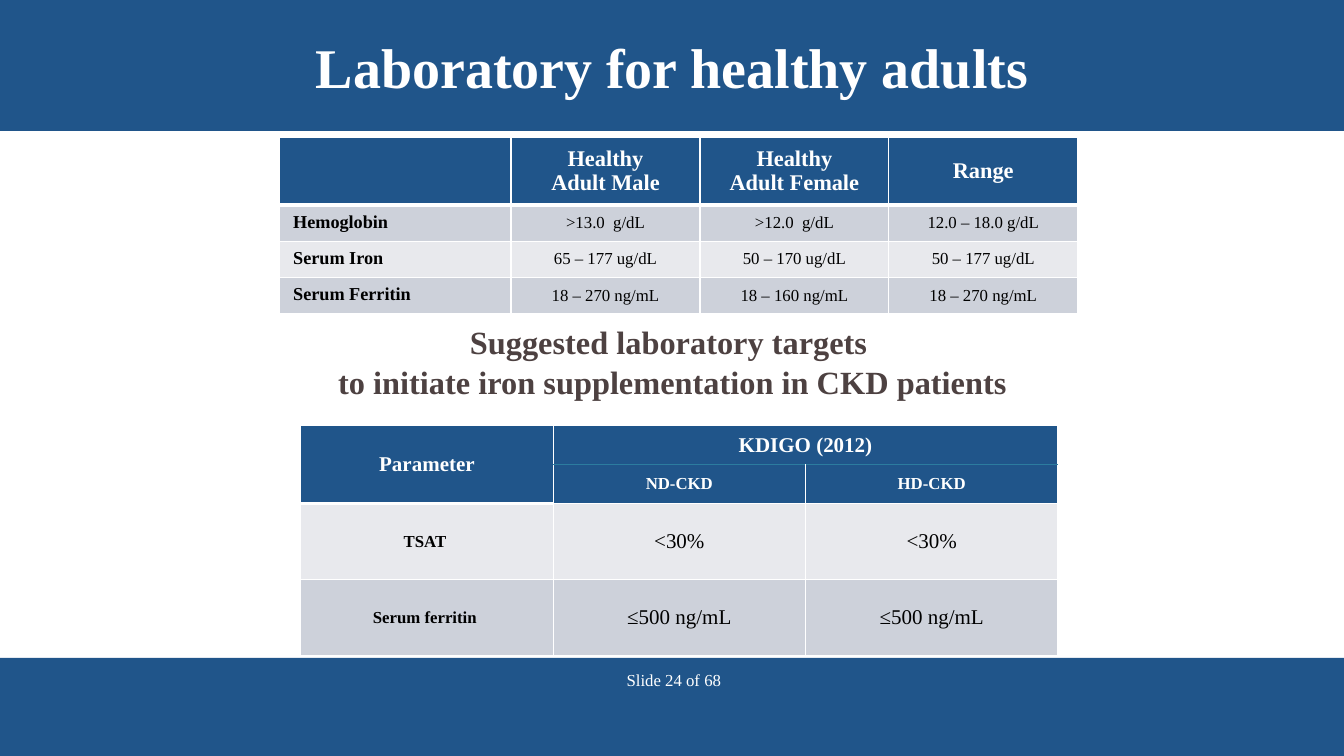
from dataclasses import dataclass

from lxml import etree
from pptx import Presentation
from pptx.dml.color import RGBColor
from pptx.enum import shapes, text
from pptx.oxml import ns
from pptx.util import Cm, Pt


@dataclass(frozen=True)
class Theme:
    """Colours, type sizes and the typeface of the slide."""
    font: str = "Times New Roman"
    blue: str = "20558A"
    white: str = "FFFFFF"
    black: str = "000000"
    brown: str = "4D4141"
    teal: str = "2C7C9F"
    dark_band: str = "CDD1DA"
    light_band: str = "E8E9ED"
    title: float = 40
    subtitle: float = 23.1
    heading: float = 16
    target: float = 15
    label: float = 13
    small: float = 12


THEME = Theme()
SLIDE_WIDTH, SLIDE_HEIGHT = 33.87, 19.05
CENTER, LEFT = text.PP_ALIGN.CENTER, text.PP_ALIGN.LEFT
TOP, MIDDLE, BOTTOM = (text.MSO_ANCHOR.TOP, text.MSO_ANCHOR.MIDDLE,
                       text.MSO_ANCHOR.BOTTOM)

HEALTHY = [
    ["", "Healthy\nAdult Male", "Healthy\nAdult Female", "Range"],
    ["Hemoglobin", ">13.0  g/dL", ">12.0  g/dL", "12.0 – 18.0 g/dL"],
    ["Serum Iron", "65 – 177 ug/dL", "50 – 170 ug/dL", "50 – 177 ug/dL"],
    ["Serum Ferritin", "18 – 270 ng/mL", "18 – 160 ng/mL", "18 – 270 ng/mL"],
]
TARGETS = [
    ["Parameter", "KDIGO (2012)", ""],
    ["", "ND-CKD", "HD-CKD"],
    ["TSAT ", "<30%", "<30%"],
    ["Serum ferritin ", "≤500 ng/mL", "≤500 ng/mL"],
]


def set_values(part, values):
    """Set every attribute of the part named in the values."""
    for name, value in values.items():
        setattr(part, name, value)


def write(frame, wording, size, color, bold=False, align=CENTER, spacing=None):
    """Fill a text frame with evenly formatted paragraphs."""
    frame.text = wording
    for paragraph in frame.paragraphs:
        set_values(paragraph, {"alignment": align, "line_spacing": spacing})
        for run in paragraph.runs:
            set_values(run.font, {"name": THEME.font, "size": Pt(size), "bold": bold})
            run.font.color.rgb = RGBColor.from_string(color)


def add_band(slide, top, height):
    """Draw a blue band across the slide."""
    band = slide.shapes.add_shape(shapes.MSO_SHAPE.RECTANGLE, 0, Cm(top),
                                  Cm(SLIDE_WIDTH), Cm(height))
    band.shadow.inherit = False
    band.fill.solid()
    band.fill.fore_color.rgb = RGBColor.from_string(THEME.blue)
    band.line.fill.background()


def add_text(slide, box, wording, anchor, **style):
    """Place a wrapped text box."""
    frame = slide.shapes.add_textbox(*map(Cm, box)).text_frame
    set_values(frame, {"word_wrap": True, "vertical_anchor": anchor})
    write(frame, wording, **style)


def add_borders(cell, edges):
    """Draw white cell borders, with other colours and widths given by edge."""
    properties = cell._tc.get_or_add_tcPr()
    for index, edge in enumerate("LRTB"):
        color, width = edges.get(edge, (THEME.white, 1))
        line = etree.Element(ns.qn(f"a:ln{edge}"), w=str(Pt(width)))
        fill = etree.SubElement(line, ns.qn("a:solidFill"))
        etree.SubElement(fill, ns.qn("a:srgbClr"), val=color)
        properties.insert(index, line)


def add_table(slide, corner, widths, heights, rows, style_cell):
    """Build a table whose cells are styled by the given rule."""
    box = (*corner, sum(widths), sum(heights))
    table = slide.shapes.add_table(len(rows), len(widths), *map(Cm, box)).table
    set_values(table, {"first_row": False, "horz_banding": False})
    for column, width in zip(table.columns, widths):
        column.width = Cm(width)
    for row, height in zip(table.rows, heights):
        row.height = Cm(height)
    for r, wordings in enumerate(rows):
        for c, wording in enumerate(wordings):
            cell = table.cell(r, c)
            fill, edges, layout, style = style_cell(r, c)
            set_values(cell, layout)
            write(cell.text_frame, wording, **style)
            cell.fill.solid()
            cell.fill.fore_color.rgb = RGBColor.from_string(fill)
            add_borders(cell, edges)
    return table


def cell_layout(side, end, anchor=MIDDLE):
    """Give the insets and anchor of a cell."""
    return {"margin_left": Cm(side), "margin_right": Cm(side),
            "margin_top": Cm(end), "margin_bottom": Cm(end),
            "vertical_anchor": anchor}


def healthy_cell(r, c):
    """Style one cell of the healthy adult values."""
    if r == 0:
        return (THEME.blue, {"B": (THEME.white, 3)}, cell_layout(0.36, 0.18),
                {"size": THEME.heading, "color": THEME.white, "bold": True})
    fill = THEME.dark_band if r % 2 else THEME.light_band
    is_label = c == 0
    return (fill, {"T": (THEME.white, 3)} if r == 1 else {},
            cell_layout(0.36, 0.18, TOP if is_label else MIDDLE),
            {"size": THEME.label if is_label else THEME.small,
             "color": THEME.black, "bold": is_label,
             "align": LEFT if is_label else CENTER})


def target_cell(r, c):
    """Style one cell of the treatment targets."""
    if r < 2:
        edges = {"B": (THEME.white, 3)} if c == 0 else {"BT"[r]: (THEME.teal, 1)}
        return (THEME.blue, edges,
                cell_layout(0.25, 0.13) if r == 0 else cell_layout(0.33, 0.18),
                {"size": THEME.small if r else THEME.target,
                 "color": THEME.white, "bold": True})
    return (THEME.dark_band if r % 2 else THEME.light_band,
            {"T": (THEME.white, 3)} if (r, c) == (2, 0) else {},
            cell_layout(0.33, 0.18),
            {"size": THEME.target if c else THEME.small,
             "color": THEME.black, "bold": c == 0})


def main():
    """Build and save the laboratory slide."""
    deck = Presentation()
    set_values(deck, {"slide_width": Cm(SLIDE_WIDTH), "slide_height": Cm(SLIDE_HEIGHT)})
    slide = deck.slides.add_slide(deck.slide_layouts[6])
    add_band(slide, 0, 3.3)
    add_band(slide, 16.58, 2.47)
    add_text(slide, (0, 0, SLIDE_WIDTH, 3.33), "Laboratory for healthy adults",
             MIDDLE, size=THEME.title, color=THEME.white, bold=True)
    add_text(slide, (15.54, 16.76, 3.23, 0.77), "Slide 24 of 68", TOP,
             size=THEME.small, color=THEME.white, align=LEFT)
    add_table(slide, (7.03, 3.45), [5.85] + [4.76] * 3, [1.69] + [0.9] * 3,
              HEALTHY, healthy_cell)
    targets = add_table(slide, (7.58, 10.73), [6.36] * 3, [0.98] * 2 + [1.92] * 2,
                        TARGETS, target_cell)
    targets.cell(0, 0).merge(targets.cell(1, 0))
    targets.cell(0, 1).merge(targets.cell(0, 2))
    add_text(slide, (5.49, 8.36, 22.94, 1.88),
             "Suggested laboratory targets \vto initiate iron supplementation in CKD patients",
             BOTTOM, size=THEME.subtitle, color=THEME.brown, bold=True, spacing=1.05)
    deck.save("out.pptx")


if __name__ == "__main__":
    main()
